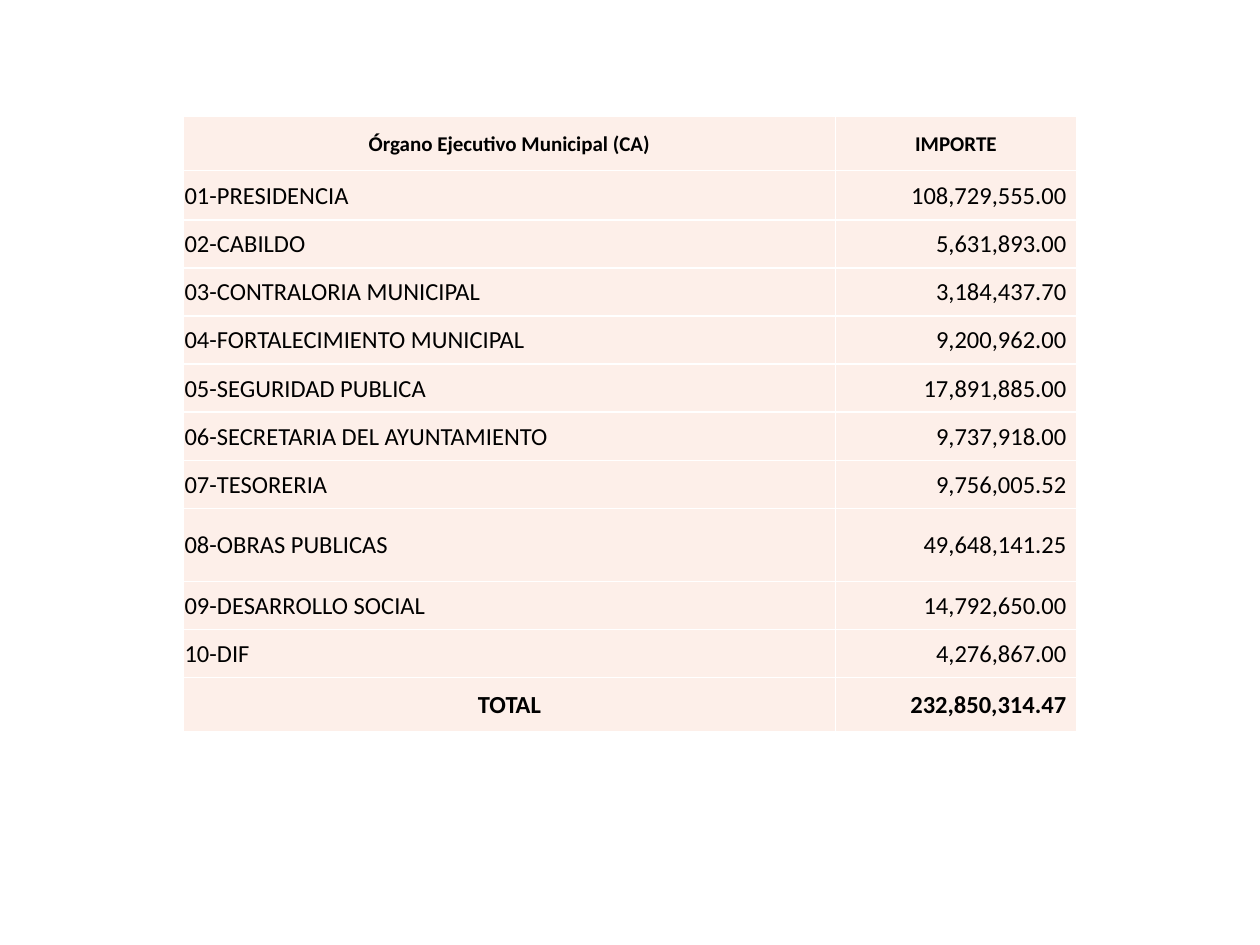
from dataclasses import dataclass

from lxml.etree import SubElement
from pptx import Presentation
from pptx.dml.color import RGBColor
from pptx.enum.text import MSO_ANCHOR, PP_ALIGN
from pptx.oxml.ns import qn
from pptx.util import Cm, Pt


@dataclass(frozen=True)
class Theme:
    font: str = "Calibri"
    text: str = "000000"
    cell: str = "FDEFE9"
    border: str = "FFFFFF"
    border_width: int = Pt(1)
    header_size: int = Pt(12)
    body_size: int = Pt(14)


THEME = Theme()

HEADER = ("Órgano Ejecutivo Municipal (CA)", "IMPORTE")
DEPARTMENTS = [
    ("01-PRESIDENCIA", "108,729,555.00"),
    ("02-CABILDO", "5,631,893.00"),
    ("03-CONTRALORIA MUNICIPAL", "3,184,437.70"),
    ("04-FORTALECIMIENTO MUNICIPAL", "9,200,962.00"),
    ("05-SEGURIDAD PUBLICA", "17,891,885.00"),
    ("06-SECRETARIA DEL AYUNTAMIENTO", "9,737,918.00"),
    ("07-TESORERIA", "9,756,005.52"),
    ("08-OBRAS PUBLICAS", "49,648,141.25"),
    ("09-DESARROLLO SOCIAL", "14,792,650.00"),
    ("10-DIF", "4,276,867.00"),
]
TOTAL = ("TOTAL", "232,850,314.47")

NAME_SHARE = 0.73
EDGE_HEIGHT = 1.1
ROW_HEIGHT = 0.97
SPECIAL_HEIGHTS = {"01-PRESIDENCIA": 0.99, "08-OBRAS PUBLICAS": 1.47}


def set_borders(cell):
    properties = cell._tc.get_or_add_tcPr()
    for side in ("a:lnL", "a:lnR", "a:lnT", "a:lnB"):
        line = SubElement(properties, qn(side), w=str(THEME.border_width))
        fill = SubElement(line, qn("a:solidFill"))
        SubElement(fill, qn("a:srgbClr"), val=THEME.border)


def format_cell(cell, text, size, alignment, bold):
    set_borders(cell)
    cell.fill.solid()
    cell.fill.fore_color.rgb = RGBColor.from_string(THEME.cell)
    cell.vertical_anchor = MSO_ANCHOR.MIDDLE
    cell.margin_left = cell.margin_top = Cm(0.02)
    cell.margin_right = Cm(0.2 if alignment == PP_ALIGN.RIGHT else 0.02)
    cell.margin_bottom = 0

    cell.text_frame.text = text
    paragraph = cell.text_frame.paragraphs[0]
    paragraph.alignment = alignment
    font = paragraph.runs[0].font
    font.name = THEME.font
    font.size = size
    font.bold = bold
    font.color.rgb = RGBColor.from_string(THEME.text)


def add_budget_table(slide, left, top, width):
    """Place the header, one row per department and the total."""
    rows = [HEADER, *DEPARTMENTS, TOTAL]
    heights = [
        EDGE_HEIGHT if row in (HEADER, TOTAL)
        else SPECIAL_HEIGHTS.get(row[0], ROW_HEIGHT)
        for row in rows
    ]
    table = slide.shapes.add_table(
        len(rows), 2, left, top, width, Cm(sum(heights))
    ).table
    table.columns[0].width = int(width * NAME_SHARE + 0.5)
    table.columns[1].width = width - table.columns[0].width

    for index, (row, height) in enumerate(zip(rows, heights)):
        table.rows[index].height = Cm(height)
        is_header = row is HEADER
        is_edge = is_header or row is TOTAL
        size = THEME.header_size if is_header else THEME.body_size
        alignments = (
            PP_ALIGN.CENTER if is_edge else PP_ALIGN.LEFT,
            PP_ALIGN.CENTER if is_header else PP_ALIGN.RIGHT,
        )
        for column, (text, alignment) in enumerate(zip(row, alignments)):
            format_cell(table.cell(index, column), text, size, alignment, is_edge)


def main():
    presentation = Presentation()
    presentation.slide_width = Cm(25.4)
    presentation.slide_height = Cm(19.05)
    blank_layout = presentation.slide_layouts[6]
    slide = presentation.slides.add_slide(blank_layout)
    add_budget_table(slide, Cm(3.7), Cm(2.34), Cm(18))
    presentation.save("out.pptx")


if __name__ == "__main__":
    main()
